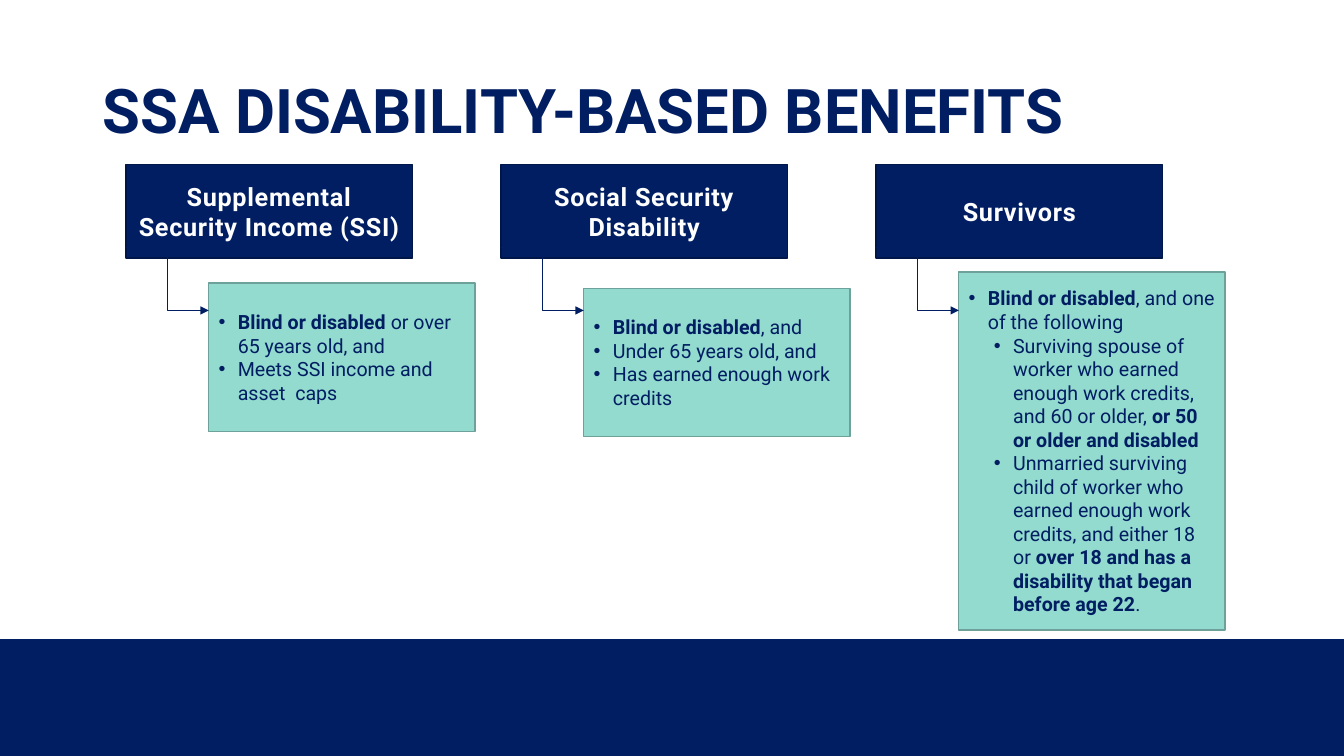
from dataclasses import dataclass
from typing import Optional

from pptx import Presentation
from pptx.dml.color import RGBColor
from pptx.enum.shapes import MSO_CONNECTOR as Connector, MSO_SHAPE as Preset
from pptx.enum.text import MSO_ANCHOR as Anchor, PP_ALIGN as Align
from pptx.oxml import parse_xml
from pptx.oxml.ns import nsdecls
from pptx.shapes.autoshape import Shape
from pptx.slide import Slide
from pptx.util import Inches, Pt


@dataclass(frozen=True)
class Theme:
    font: str = "Roboto"
    navy: str = "001E61"
    navy_edge: str = "001648"
    mint: str = "93DACF"
    mint_edge: str = "6DA199"
    white: str = "FEFEFE"
    title_size: float = 44
    header_size: float = 18
    body_size: float = 14


@dataclass(frozen=True)
class Span:
    text: str
    bold: bool = False


@dataclass(frozen=True)
class Bullet:
    spans: tuple[Span, ...]
    level: int = 0


@dataclass(frozen=True)
class Benefit:
    name: str
    detail_top: float
    detail_height: float
    bullets: tuple[Bullet, ...]


THEME = Theme()
FIRST_LEFT, COLUMN_STEP = 1.25, 3.72
HEADER_TOP, HEADER_WIDTH, HEADER_HEIGHT = 1.63, 2.84, 0.93
DETAIL_OFFSET, DETAIL_WIDTH = 0.82, 2.64
ARROW_START, ARROW_END = 2.45, 3.08

BENEFITS = (
    Benefit("Supplemental Security Income (SSI)", 2.81, 1.47, (
        Bullet((Span("Blind or disabled ", True), Span("or over 65 years old, and"))),
        Bullet((Span("Meets SSI income and asset  caps"),)),
    )),
    Benefit("Social Security Disability", 2.86, 1.47, (
        Bullet((Span("Blind or disabled", True), Span(", and"))),
        Bullet((Span("Under 65 years old, and"),)),
        Bullet((Span("Has earned enough work credits"),)),
    )),
    Benefit("Survivors", 2.7, 3.55, (
        Bullet((Span("Blind or disabled", True), Span(", and one of the following"))),
        Bullet((
            Span("Surviving spouse of worker who earned enough work credits, and 60 or older, "),
            Span("or 50 or older and disabled", True),
        ), 1),
        Bullet((
            Span("Unmarried surviving child of worker who earned enough work credits, and either 18 or "),
            Span("over 18 and has a disability that began before age 22", True),
            Span("."),
        ), 1),
    )),
)


def color(value: str) -> RGBColor:
    return RGBColor.from_string(value)


def add_run(paragraph, span: Span, size: float, ink: str):
    run = paragraph.add_run()
    run.text = span.text
    formats = {"name": THEME.font, "size": Pt(size), "bold": span.bold}
    for name, value in formats.items():
        setattr(run.font, name, value)
    run.font.color.rgb = color(ink)
    return run


def add_box(slide: Slide, left: float, top: float, width: float, height: float,
            fill: str, edge: Optional[str] = None) -> Shape:
    shape = slide.shapes.add_shape(
        Preset.RECTANGLE, Inches(left), Inches(top), Inches(width), Inches(height))
    shape.shadow.inherit = False
    shape.fill.solid()
    shape.fill.fore_color.rgb = color(fill)
    if edge:
        shape.line.color.rgb = color(edge)
        shape.line.width = Pt(1)
    else:
        shape.line.fill.background()
    frame_formats = {"word_wrap": True, "vertical_anchor": Anchor.MIDDLE}
    for name, value in frame_formats.items():
        setattr(shape.text_frame, name, value)
    return shape


def add_title(slide: Slide, text: str) -> None:
    box = slide.shapes.add_textbox(Inches(0.92), Inches(0.4), Inches(11.5), Inches(1.45))
    frame_formats = {"word_wrap": True, "vertical_anchor": Anchor.MIDDLE}
    for name, value in frame_formats.items():
        setattr(box.text_frame, name, value)
    paragraph = box.text_frame.paragraphs[0]
    paragraph.line_spacing = 0.9
    add_run(paragraph, Span(text, True), THEME.title_size, THEME.navy)


def add_header(slide: Slide, benefit: Benefit, left: float) -> None:
    shape = add_box(slide, left, HEADER_TOP, HEADER_WIDTH, HEADER_HEIGHT,
                    THEME.navy, THEME.navy_edge)
    paragraph = shape.text_frame.paragraphs[0]
    paragraph.alignment = Align.CENTER
    run = add_run(paragraph, Span(benefit.name, True), THEME.header_size, THEME.white)
    properties = run.font._element
    properties.set("spc", "50")
    properties.insert(0, parse_xml(
        f'<a:ln {nsdecls("a")} w="{Pt(0.75)}"><a:solidFill>'
        f'<a:srgbClr val="{THEME.navy}"/></a:solidFill></a:ln>'))


def add_arrow(slide: Slide, left: float) -> None:
    connector = slide.shapes.add_connector(
        Connector.ELBOW, Inches(left), Inches(ARROW_START),
        Inches(left + DETAIL_OFFSET), Inches(ARROW_END))
    connector.line.color.rgb = color(THEME.navy)
    connector.line.width = Pt(0.5)
    connector.line._get_or_add_ln().append(
        parse_xml(f'<a:tailEnd {nsdecls("a")} type="triangle"/>'))
    connector._element.spPr.append(parse_xml(f'<a:effectLst {nsdecls("a")}/>'))


def add_detail(slide: Slide, benefit: Benefit, left: float) -> None:
    shape = add_box(slide, left + DETAIL_OFFSET, benefit.detail_top, DETAIL_WIDTH,
                    benefit.detail_height, THEME.mint, THEME.mint_edge)
    frame = shape.text_frame
    for index, bullet in enumerate(benefit.bullets):
        paragraph = frame.add_paragraph() if index else frame.paragraphs[0]
        paragraph.alignment = Align.LEFT
        paragraph.level = bullet.level
        properties = paragraph._p.get_or_add_pPr()
        properties.set("marL", str(Inches(0.19 + 0.25 * bullet.level)))
        properties.set("indent", str(Inches(-0.19)))
        properties.append(parse_xml(f'<a:buFont {nsdecls("a")} typeface="Arial"/>'))
        properties.append(parse_xml(f'<a:buChar {nsdecls("a")} char="•"/>'))
        for span in bullet.spans:
            add_run(paragraph, span, THEME.body_size, THEME.navy)


def main() -> None:
    presentation = Presentation()
    presentation.slide_width = Inches(13.33)
    presentation.slide_height = Inches(7.5)
    slide = presentation.slides.add_slide(presentation.slide_layouts[6])
    add_box(slide, 0, 6.34, 13.33, 1.16, THEME.navy)
    add_title(slide, "SSA DISABILITY-BASED BENEFITS")
    for draw in (add_header, add_detail):
        for column, benefit in enumerate(BENEFITS):
            draw(slide, benefit, FIRST_LEFT + column * COLUMN_STEP)
    for column in range(len(BENEFITS)):
        add_arrow(slide, FIRST_LEFT + column * COLUMN_STEP)
    presentation.save("out.pptx")


if __name__ == "__main__":
    main()
